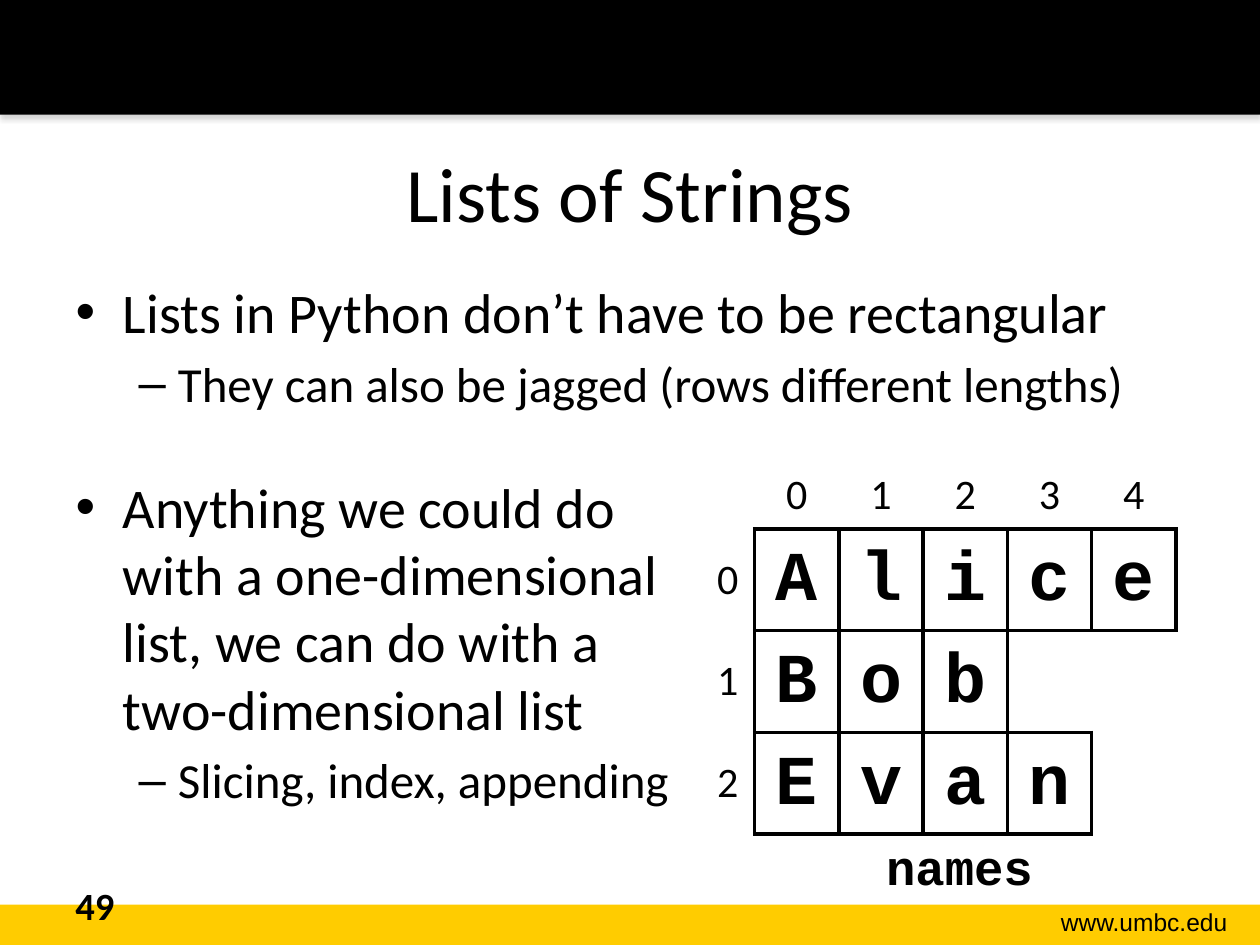
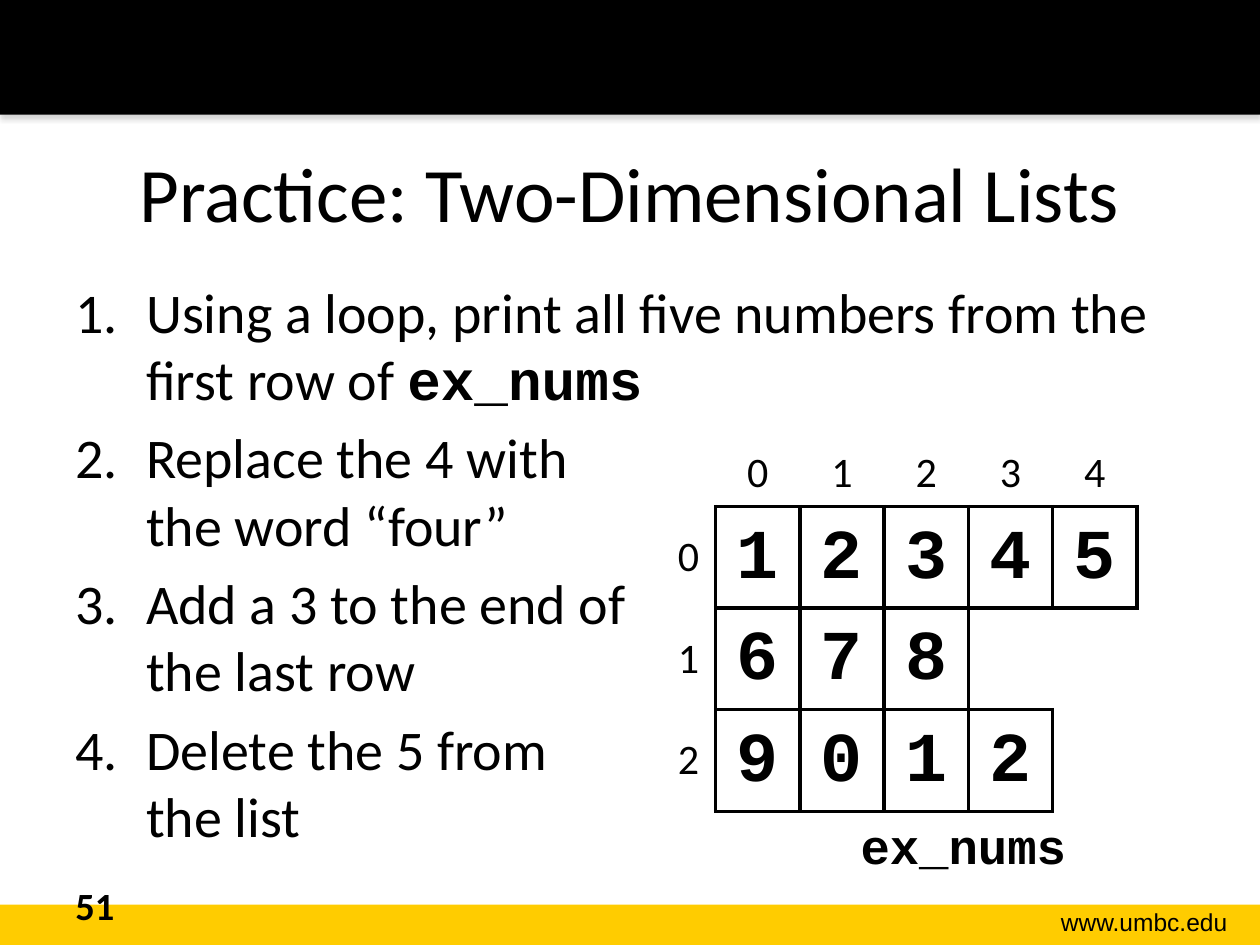
from lxml.etree import SubElement as Sub
from pptx import Presentation
from pptx.dml.color import RGBColor
from pptx.enum.shapes import MSO_SHAPE as Shape
from pptx.enum.text import MSO_ANCHOR as Anchor, MSO_AUTO_SIZE as Fit, PP_ALIGN as Align
from pptx.oxml import parse_xml
from pptx.oxml.ns import nsdecls, qn
from pptx.util import Inches, Pt

BLACK = RGBColor(0x00, 0x00, 0x00)
WHITE = RGBColor(0xFF, 0xFF, 0xFF)
GOLD = RGBColor(0xFF, 0xCC, 0x00)
SANS, CODE, WEB = "Calibri", "Courier New", "Arial"
COLS, ROWS = 100, 75
UNIT = Inches(0.1)
PLAIN = "{2D5ABB26-0587-4C30-8999-92F81FD0307C}"
SHADE = (f'<a:effectLst {nsdecls("a")}><a:outerShdw blurRad="39370" dist="22860" dir="5400000">'
         '<a:srgbClr val="808080"><a:alpha val="35000"/></a:srgbClr></a:outerShdw></a:effectLst>')


def grid(*box):
    """Turn grid columns and rows into lengths."""
    return [round(n * UNIT) for n in box]


def style(item, name, size, bold=False):
    """Set the font of a paragraph or run."""
    font = item.font
    font.name, font.size, font.bold = name, Pt(size), bold
    font.color.rgb = BLACK


def label(slide, box, text, name, size, bold=False, align=Align.LEFT):
    """Add a line of text in a box."""
    frame = slide.shapes.add_textbox(*grid(*box)).text_frame
    frame.word_wrap = True
    par = frame.paragraphs[0]
    par.text, par.alignment = text, align
    style(par, name, size, bold)


def band(slide, box, color):
    """Add a flat bar across the slide."""
    bar = slide.shapes.add_shape(Shape.RECTANGLE, *grid(*box))
    bar.fill.solid()
    bar.fill.fore_color.rgb = color
    bar.line.fill.background()
    bar.shadow.inherit = False
    return bar


def hold(shape, box):
    """Move a placeholder to its box and fix its text size."""
    shape.left, shape.top, shape.width, shape.height = grid(*box)
    shape.text_frame.auto_size = Fit.NONE
    return shape.text_frame


def frame(deck, title, page):
    """Add a slide with its bands, title and footer."""
    slide = deck.slides.add_slide(deck.slide_layouts[1])
    band(slide, (0, ROWS - 3.2, COLS, 3.2), GOLD)
    props = band(slide, (0, 0, COLS, 9.1), BLACK)._element.spPr
    props.replace(props.find(qn("a:effectLst")), parse_xml(SHADE))
    label(slide, (78.5, 71.5, 19.9, 3.4), "www.umbc.edu", WEB, 14, align=Align.RIGHT)
    label(slide, (5, 69.5, 23.3, 4), page, SANS, 22, True)
    head = hold(slide.shapes.title, (5, 9, 90, 12.5))
    head.vertical_anchor = Anchor.MIDDLE
    head.text = title
    par = head.paragraphs[0]
    par.alignment = Align.CENTER
    style(par, SANS, 44)
    return slide


def points(slide, width, items, count=False):
    """Fill the body with a bulleted or numbered list."""
    body = hold(slide.placeholders[1], (5, 21.5, width, 45.5))
    for spot, (level, gap, text, code) in enumerate(items):
        par = body.paragraphs[0] if spot == 0 else body.add_paragraph()
        par.level, par.space_before = level, Pt(gap)
        if count:
            props = par._p.get_or_add_pPr()
            props.set("marL", str(Inches(0.56)))
            props.set("indent", str(-Inches(0.56)))
            Sub(props, qn("a:buFont"), typeface="+mj-lt")
            Sub(props, qn("a:buAutoNum"), type="arabicPeriod")
        par.text = text
        style(par, SANS, 28 if level else 32)
        if code:
            run = par.add_run()
            run.text = code
            style(run, CODE, 32, True)


def edge(cell, sides):
    """Draw the named sides of a cell and clear the rest."""
    props = cell._tc.get_or_add_tcPr()
    for side in "LRTB":
        line = Sub(props, qn("a:ln" + side), w=str(Pt(2.25)))
        if side in sides:
            fill = Sub(line, qn("a:solidFill"))
            Sub(fill, qn("a:srgbClr"), val=str(BLACK))
        else:
            Sub(line, qn("a:noFill"))


def jagged(slide, left, top, words):
    """Draw words as boxed rows of letters with their indexes."""
    wide = max(map(len, words))
    box = grid(left, top, 6.69 * (wide + 2), 5.3 + 7.62 * len(words))
    table = slide.shapes.add_table(len(words) + 1, wide + 2, *box).table
    table.first_row = table.horz_banding = False
    table._tbl.tblPr.find(qn("a:tableStyleId")).text = PLAIN
    for row, line in enumerate(table.rows):
        line.height = grid(7.62 if row else 5.3)[0]

    def boxed(row, col):
        return 0 < row <= len(words) and 0 < col <= len(words[row - 1])

    near = {"L": (0, -1), "R": (0, 1), "T": (-1, 0), "B": (1, 0)}
    for row in range(len(words) + 1):
        for col in range(wide + 2):
            cell = table.cell(row, col)
            full = boxed(row, col)
            edge(cell, [s for s, (y, x) in near.items() if full or boxed(row + y, col + x)])
            cell.margin_left = cell.margin_right = Inches(0.13)
            cell.margin_top = cell.margin_bottom = Inches(0.07)
            cell.vertical_anchor = Anchor.BOTTOM if col else Anchor.MIDDLE
            if row or col:
                cell.fill.solid()
                cell.fill.fore_color.rgb = WHITE
            par = cell.text_frame.paragraphs[0]
            par.alignment = Align.CENTER if col else Align.RIGHT
            if full:
                par.text = words[row - 1][col - 1]
                style(par, CODE, 40, True)
            elif row and not col:
                par.text = str(row - 1)
                style(par, SANS, 24)
            elif not row and 0 < col <= wide:
                par.text = str(col - 1)
                style(par, SANS, 24)


def strings(deck):
    """Build the slide on lists of strings."""
    slide = frame(deck, "Lists of Strings", "49")
    points(slide, 90, [
        (0, 0, "Lists in Python don’t have to be rectangular", ""),
        (1, 5, "They can also be jagged (rows different lengths)", ""),
        (0, 34.5, "Anything we could do\vwith a one-dimensional\v"
                  "list, we can do with a\vtwo-dimensional list", ""),
        (1, 5, "Slicing, index, appending", ""),
    ])
    jagged(slide, 53.2, 36.6, ["Alice", "Bob", "Evan"])
    label(slide, (65.7, 65.9, 20.9, 5.7), "names", CODE, 28, True, Align.CENTER)


def practice(deck):
    """Build the practice slide."""
    slide = frame(deck, "Practice: Two-Dimensional Lists", "51")
    points(slide, 93.7, [
        (0, 0, "Using a loop, print all five numbers from the first row of ", "ex_nums"),
        (0, 6.4, "Replace the 4 with\vthe word “four”", ""),
        (0, 6.4, "Add a 3 to the end of\vthe last row", ""),
        (0, 6.4, "Delete the 5 from\vthe list", ""),
    ], count=True)
    jagged(slide, 50.1, 34.8, ["12345", "678", "9012"])
    label(slide, (57.9, 64.2, 37.1, 5.7), "ex_nums", CODE, 28, True, Align.CENTER)


def main():
    """Build and save the deck."""
    deck = Presentation()
    deck.slide_width, deck.slide_height = grid(COLS, ROWS)
    strings(deck)
    practice(deck)
    deck.save("out.pptx")


if __name__ == "__main__":
    main()
